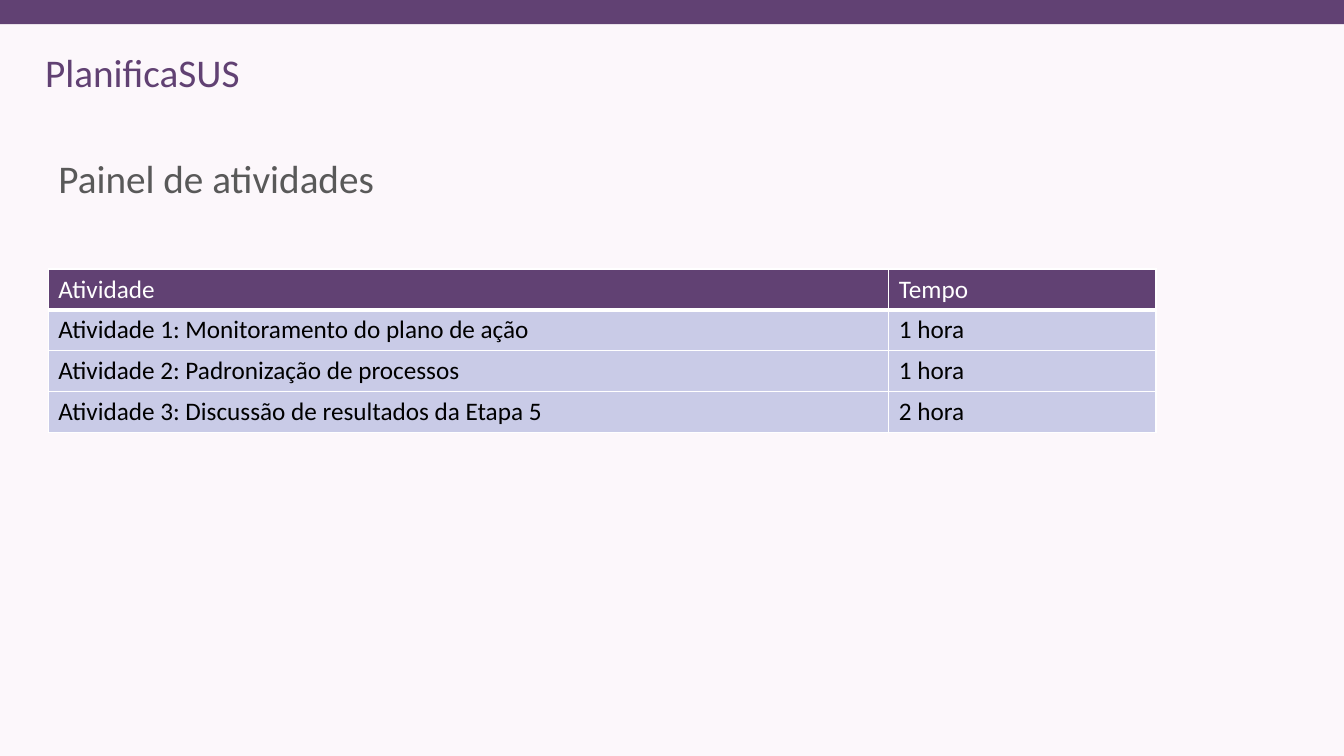
from lxml import etree
from pptx import Presentation
from pptx.dml.color import RGBColor
from pptx.enum.shapes import MSO_SHAPE as Shape
from pptx.enum.text import MSO_ANCHOR as Anchor, MSO_AUTO_SIZE as AutoSize, PP_ALIGN as Align
from pptx.oxml.ns import qn
from pptx.util import Cm, Pt

# Content
PROGRAM = "PlanificaSUS"
TITLE = "Painel de atividades"
ROWS = [
    ("Atividade", "Tempo"),
    ("Atividade 1: Monitoramento do plano de ação", "1 hora"),
    ("Atividade 2: Padronização de processos", "1 hora"),
    ("Atividade 3: Discussão de resultados da Etapa 5", "2 hora"),
]

# Look and measures (cm)
FONT = "Calibri"
PURPLE, GREY, LILAC = "614173", "595959", "C9CBE7"
WHITE, BLACK, BACKGROUND = "FFFFFF", "000000", "FCF7FB"
WIDTH, HEIGHT = 33.87, 19.05
LEFT = 1.22
COLUMNS = (21.18, 6.73)
ROW_HEIGHT = 1.03


def color(value):
    return RGBColor.from_string(value)


def paint(fill, value):
    fill.solid()
    fill.fore_color.rgb = color(value)


def write(frame, text, size, value):
    paragraph = frame.paragraphs[0]
    paragraph.alignment = Align.LEFT
    run = paragraph.add_run()
    run.text = text
    run.font.name = FONT
    run.font.size = Pt(size)
    run.font.color.rgb = color(value)
    return paragraph


def add_borders(cell, bottom):
    properties = cell._tc.get_or_add_tcPr()
    widths = {"a:lnL": 1, "a:lnR": 1, "a:lnT": 1, "a:lnB": bottom}
    for position, (side, width) in enumerate(widths.items()):
        line = etree.Element(qn(side), w=str(Pt(width)))
        fill = etree.SubElement(line, qn("a:solidFill"))
        etree.SubElement(fill, qn("a:srgbClr"), val=WHITE)
        properties.insert(position, line)


presentation = Presentation()
presentation.slide_width, presentation.slide_height = Cm(WIDTH), Cm(HEIGHT)
slide = presentation.slides.add_slide(presentation.slide_layouts[5])
paint(slide.background.fill, BACKGROUND)

# Top band
band = slide.shapes.add_shape(Shape.RECTANGLE, 0, 0, Cm(WIDTH), Cm(0.61))
band.shadow.inherit = False
paint(band.fill, PURPLE)
band.line.fill.background()

# Program name
program = slide.shapes.add_textbox(Cm(0.89), Cm(1.09), Cm(5.46), Cm(1.45))
program.text_frame.word_wrap = False
program.text_frame.auto_size = AutoSize.SHAPE_TO_FIT_TEXT
write(program.text_frame, PROGRAM, 28, PURPLE)

# Title
title = slide.shapes.title
title.left, title.top = Cm(LEFT), Cm(2.72)
title.width, title.height = Cm(sum(COLUMNS)), Cm(3.68)
title.text_frame.vertical_anchor = Anchor.MIDDLE
title.text_frame.auto_size = AutoSize.NONE
write(title.text_frame, TITLE, 28, GREY).line_spacing = 0.9

# Activity table
table = slide.shapes.add_table(
    len(ROWS), len(COLUMNS), Cm(LEFT), Cm(6.78),
    Cm(sum(COLUMNS)), Cm(ROW_HEIGHT * len(ROWS))).table
for column, width in zip(table.columns, COLUMNS):
    column.width = Cm(width)
for row_index, texts in enumerate(ROWS):
    is_header = row_index == 0
    table.rows[row_index].height = Cm(ROW_HEIGHT)
    for column_index, text in enumerate(texts):
        cell = table.cell(row_index, column_index)
        paint(cell.fill, PURPLE if is_header else LILAC)
        add_borders(cell, bottom=3 if is_header else 1)
        paragraph = write(cell.text_frame, text, 18, WHITE if is_header else BLACK)
        paragraph.runs[0].font.bold = False

presentation.save("out.pptx")
